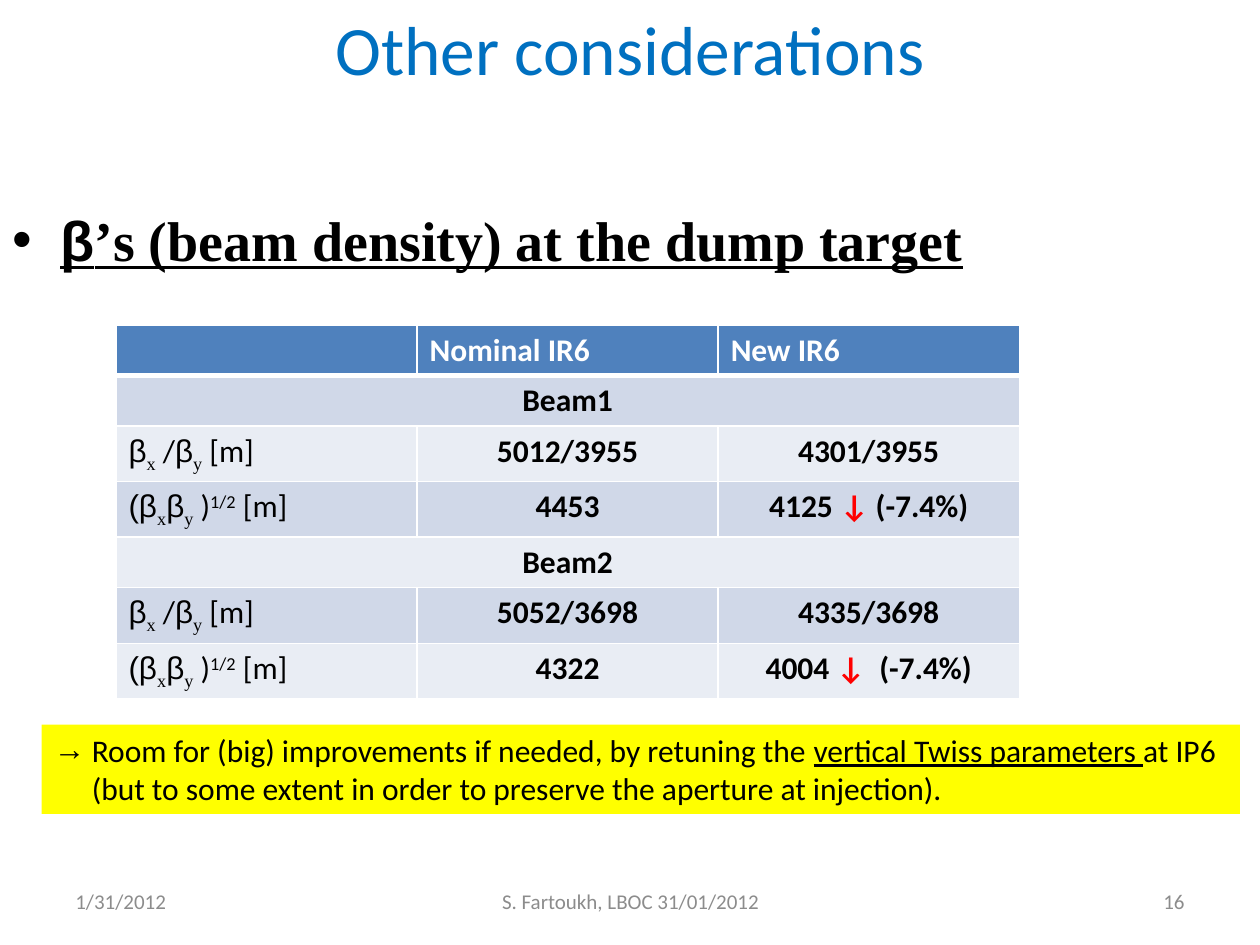
from pptx import Presentation
from pptx.util import Inches, Pt
from pptx.dml.color import RGBColor
from pptx.enum.shapes import MSO_SHAPE
from pptx.enum.text import PP_ALIGN, MSO_ANCHOR
from pptx.oxml.ns import qn
from lxml.etree import SubElement

LEFT, MID, RIGHT = PP_ALIGN.LEFT, PP_ALIGN.CENTER, PP_ALIGN.RIGHT
BETA = {"font": "Arial"}
SUB = {"font": "Times New Roman", "base": -25}
RED = {"color": "FF0000"}
PAIR = [("β", BETA), ("x", SUB), " /", ("β", BETA), ("y", SUB), " [m]"]
ROOT = [("(β", BETA), ("x", SUB), ("β", BETA), ("y", SUB), " )",
        ("1/2", {"base": 30}), " [m]"]
ROWS = [
    ["", "Nominal IR6", "New IR6"],
    ["Beam1"],
    [PAIR, "5012/3955", "4301/3955"],
    [ROOT, "4453", ["4125 ", ("↓ ", RED), "(-7.4%)"]],
    ["Beam2"],
    [PAIR, "5052/3698", "4335/3698"],
    [ROOT, "4322", ["4004 ", ("↓ ", RED), " (-7.4%)"]],
]
HEAD = "Other considerations"
TOPIC = [("β", BETA), "’s (beam density) at the dump target"]
NOTE = ["Room for (big) improvements if needed, by retuning the ",
        ("vertical Twiss parameters ", {"line": True}), "at IP6"]
MORE = "(but to some extent in order to preserve the aperture at injection)."
FOOT = [
    ("1/31/2012", 0.5, 2.33, LEFT),
    ("S. Fartoukh, LBOC 31/01/2012", 3.42, 3.17, MID),
    ("16", 7.17, 2.33, RIGHT),
]


def paint(fill, color):
    fill.solid()
    fill.fore_color.rgb = RGBColor.from_string(color)


def style(run, size=18, font="Calibri", color="000000", bold=False,
          line=False, base=0):
    run.font.size = Pt(size)
    run.font.name = font
    run.font.bold = bold
    run.font.underline = line
    paint(run.font.fill, color)
    if base:
        run.font._element.set("baseline", str(base * 1000))


def write(para, text, align=LEFT, **look):
    para.alignment = align
    for part in [text] if isinstance(text, str) else text:
        words, own = (part, {}) if isinstance(part, str) else part
        run = para.add_run()
        run.text = words
        style(run, **{**look, **own})


def indent(para, left, sign=None):
    props = para._p.get_or_add_pPr()
    props.set("marL", str(Inches(left)))
    props.set("indent", str(Inches(-left if sign else 0)))
    if sign:
        SubElement(props, qn("a:buFont"), typeface="Arial")
        SubElement(props, qn("a:buChar"), char=sign)


def box(slide, left, top, width, height, anchor=MSO_ANCHOR.MIDDLE):
    shape = slide.shapes.add_textbox(*map(Inches, (left, top, width, height)))
    frame = shape.text_frame
    frame.word_wrap = True
    frame.vertical_anchor = anchor
    return frame.paragraphs[0]


def edge(cell, row):
    props = cell._tc.get_or_add_tcPr()
    thick = {0: "lnB", 1: "lnT"}.get(row)
    for side in ("lnL", "lnR", "lnT", "lnB"):
        width = Pt(3 if side == thick else 1)
        line = SubElement(props, qn("a:" + side), w=str(width))
        fill = SubElement(line, qn("a:solidFill"))
        SubElement(fill, qn("a:srgbClr"), val="FFFFFF")


def grid(slide):
    area = map(Inches, (0.92, 2.58, 7.17, 2.78))
    table = slide.shapes.add_table(len(ROWS), 3, *area).table
    for col in table.columns:
        col.width = Inches(2.39)
    for r, row in enumerate(ROWS):
        table.rows[r].height = Inches(0.44 if r == len(ROWS) - 1 else 0.39)
        for c in range(3):
            cell = table.cell(r, c)
            edge(cell, r)
            paint(cell.fill, ("E9EDF4", "D0D8E8")[r % 2] if r else "4F81BD")
        if len(row) == 1:
            table.cell(r, 0).merge(table.cell(r, 2))
        for c, text in enumerate(row):
            if text:
                label = c == 0 and len(row) > 1
                write(table.cell(r, c).text_frame.paragraphs[0], text,
                      align=LEFT if label or r == 0 else MID,
                      bold=not label, color="000000" if r else "FFFFFF")


def note(slide):
    area = map(Inches, (0.33, 5.75, 9.51, 0.71))
    shape = slide.shapes.add_shape(MSO_SHAPE.RECTANGLE, *area)
    shape.shadow.inherit = False
    paint(shape.fill, "FFFF00")
    shape.line.fill.background()
    frame = shape.text_frame
    frame.word_wrap = True
    frame.vertical_anchor = MSO_ANCHOR.TOP
    first, second = frame.paragraphs[0], frame.add_paragraph()
    write(first, NOTE)
    indent(first, 0.3, "→")
    write(second, MORE)
    indent(second, 0.3)


def main():
    deck = Presentation()
    deck.slide_width, deck.slide_height = Inches(10), Inches(7.5)
    slide = deck.slides.add_slide(deck.slide_layouts[6])
    write(box(slide, 0.5, 0, 9, 0.75), HEAD, align=MID, size=39.6,
          color="0070C0")
    for text, left, width, align in FOOT:
        write(box(slide, left, 6.95, width, 0.4), text, align=align, size=12,
              color="8C8C8C")
    grid(slide)
    topic = box(slide, 0, 1.58, 9.58, 0.67, MSO_ANCHOR.TOP)
    topic.space_before = Pt(6.4)
    write(topic, TOPIC, size=32, font="Times New Roman", bold=True, line=True)
    indent(topic, 0.38, "•")
    note(slide)
    deck.save("out.pptx")


if __name__ == "__main__":
    main()
